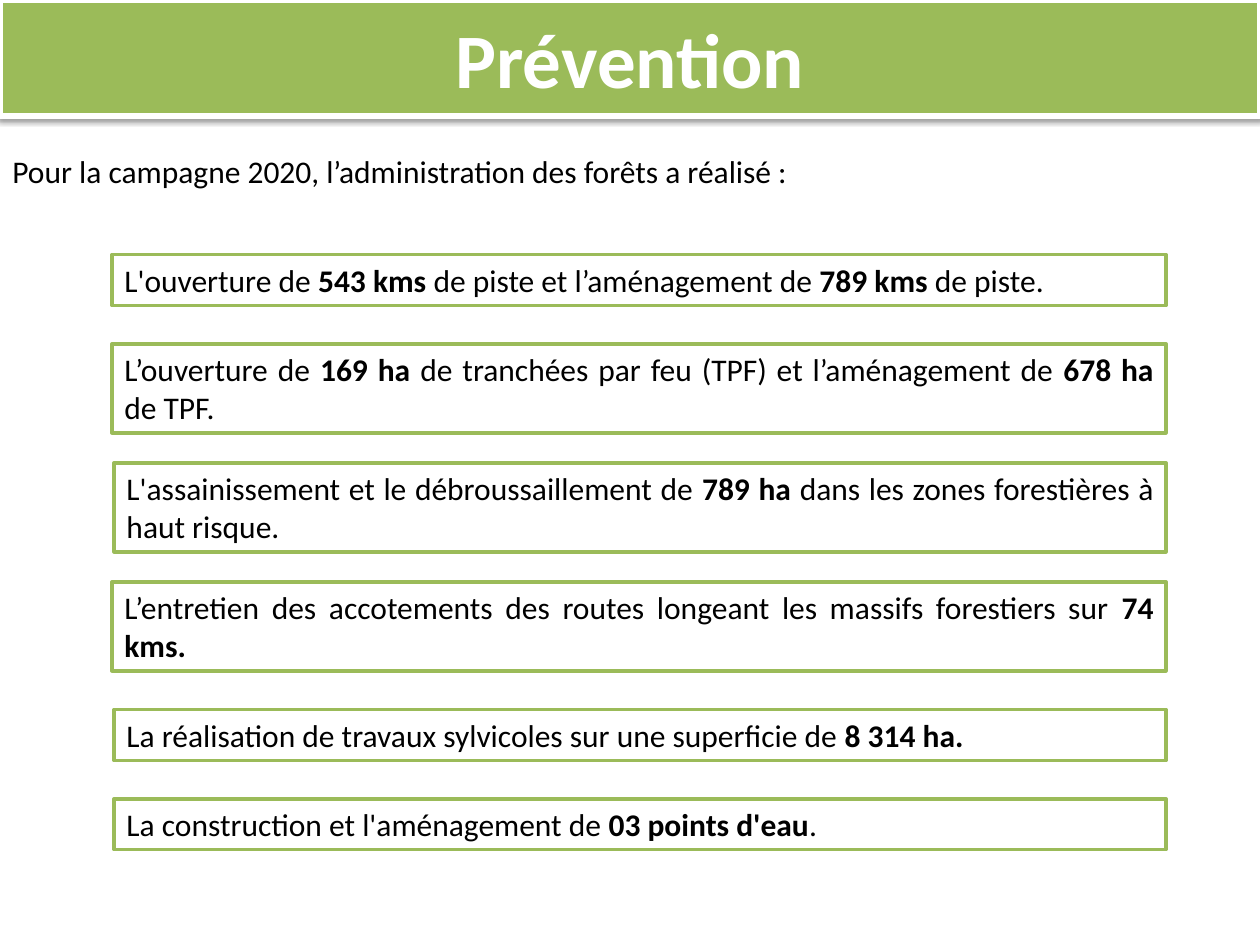
"""Build the slide on forest fire prevention works."""
from dataclasses import dataclass

from lxml.etree import fromstring
from pptx import Presentation
from pptx.dml.color import RGBColor as Rgb
from pptx.enum.shapes import MSO_SHAPE as Kind
from pptx.enum.text import MSO_ANCHOR as Anchor
from pptx.enum.text import MSO_AUTO_SIZE as Fit
from pptx.enum.text import PP_ALIGN as Align
from pptx.util import Pt

HUES = {"green": "9BBB59", "white": "FFFFFF", "black": "000000"}
WIDE, HIGH = 720, 540
RIGHT = 666.3
ONE, TWO = 29.08, 50.89
SHADE = (
    '<a:effectLst xmlns:a="http://schemas.openxmlformats.org/drawingml/2006/main">'
    f'<a:outerShdw blurRad="{Pt(3.1)}" dist="{Pt(1.6)}" dir="5400000" rotWithShape="0">'
    f'<a:srgbClr val="{HUES["black"]}"><a:alpha val="38000"/></a:srgbClr>'
    "</a:outerShdw></a:effectLst>"
)


@dataclass
class Work:
    """A framed line of work; stars enclose the bold words."""

    left: float
    top: float
    high: float
    text: str


WORKS = [
    Work(64, 145.5, ONE, "L'ouverture de *543 kms* de piste et l’aménagement de *789 kms *de piste."),
    Work(64, 196.5, TWO, "L’ouverture de *169 ha *de tranchées par feu (TPF) et l’aménagement de *678 ha *de TPF."),
    Work(65.2, 264.5, TWO, "L'assainissement et le débroussaillement de *789 ha *dans les zones forestières à haut risque."),
    Work(64, 332.5, TWO, "L’entretien des accotements des routes longeant les massifs forestiers sur *74 kms.*"),
    Work(65.2, 405.5, ONE, "La réalisation de travaux sylvicoles sur une superficie de *8 314 ha.*"),
    Work(65.2, 456.5, ONE, "La construction et l'aménagement de *03 points d'eau*."),
]


def hue(name: str) -> Rgb:
    """Return a named colour."""
    return Rgb.from_string(HUES[name])


def apply(item, look: dict) -> None:
    """Set each attribute of an item from its format values."""
    for name, value in look.items():
        setattr(item, name, value)


def paint(shape, fill: str, edge: str, width: float) -> None:
    """Fill and outline a shape."""
    shape.fill.solid()
    shape.fill.fore_color.rgb = hue(fill)
    shape.line.color.rgb = hue(edge)
    shape.line.width = Pt(width)


def write(shape, text: str, size: float = 18, ink: str = "black",
          align: Align = Align.JUSTIFY, anchor: Anchor = Anchor.TOP, bold: bool = False) -> None:
    """Write text into a shape, with starred words in bold."""
    frame = shape.text_frame
    apply(frame, {"word_wrap": True, "auto_size": Fit.NONE, "vertical_anchor": anchor})
    para = frame.paragraphs[0]
    para.alignment = align
    for i, part in enumerate(text.split("*")):
        if part:
            run = para.add_run()
            run.text = part
            apply(run.font, {"name": "Calibri", "size": Pt(size), "bold": bold or i % 2 == 1})
            run.font.color.rgb = hue(ink)


def head(slide, text: str) -> None:
    """Turn the title placeholder into the top band."""
    band = slide.shapes.title
    apply(band, {"left": Pt(0), "top": Pt(0), "width": Pt(WIDE), "height": Pt(66.4)})
    paint(band, "green", "white", 3)
    band.element.spPr.append(fromstring(SHADE))
    write(band, text, 44, "white", Align.CENTER, Anchor.MIDDLE, True)


def frame_work(slide, work: Work) -> None:
    """Draw one framed line of work."""
    box = slide.shapes.add_shape(
        Kind.RECTANGLE, Pt(work.left), Pt(work.top), Pt(RIGHT - work.left), Pt(work.high))
    box.shadow.inherit = False
    paint(box, "white", "green", 2)
    write(box, work.text)


def main() -> None:
    """Build and save the slide."""
    deck = Presentation()
    apply(deck, {"slide_width": Pt(WIDE), "slide_height": Pt(HIGH)})
    slide = deck.slides.add_slide(deck.slide_layouts[5])
    head(slide, "Prévention")
    intro = slide.shapes.add_textbox(Pt(0), Pt(83.5), Pt(WIDE), Pt(ONE))
    write(intro, "Pour la campagne 2020, l’administration des forêts a réalisé :")
    for work in WORKS:
        frame_work(slide, work)
    deck.save("out.pptx")


if __name__ == "__main__":
    main()
